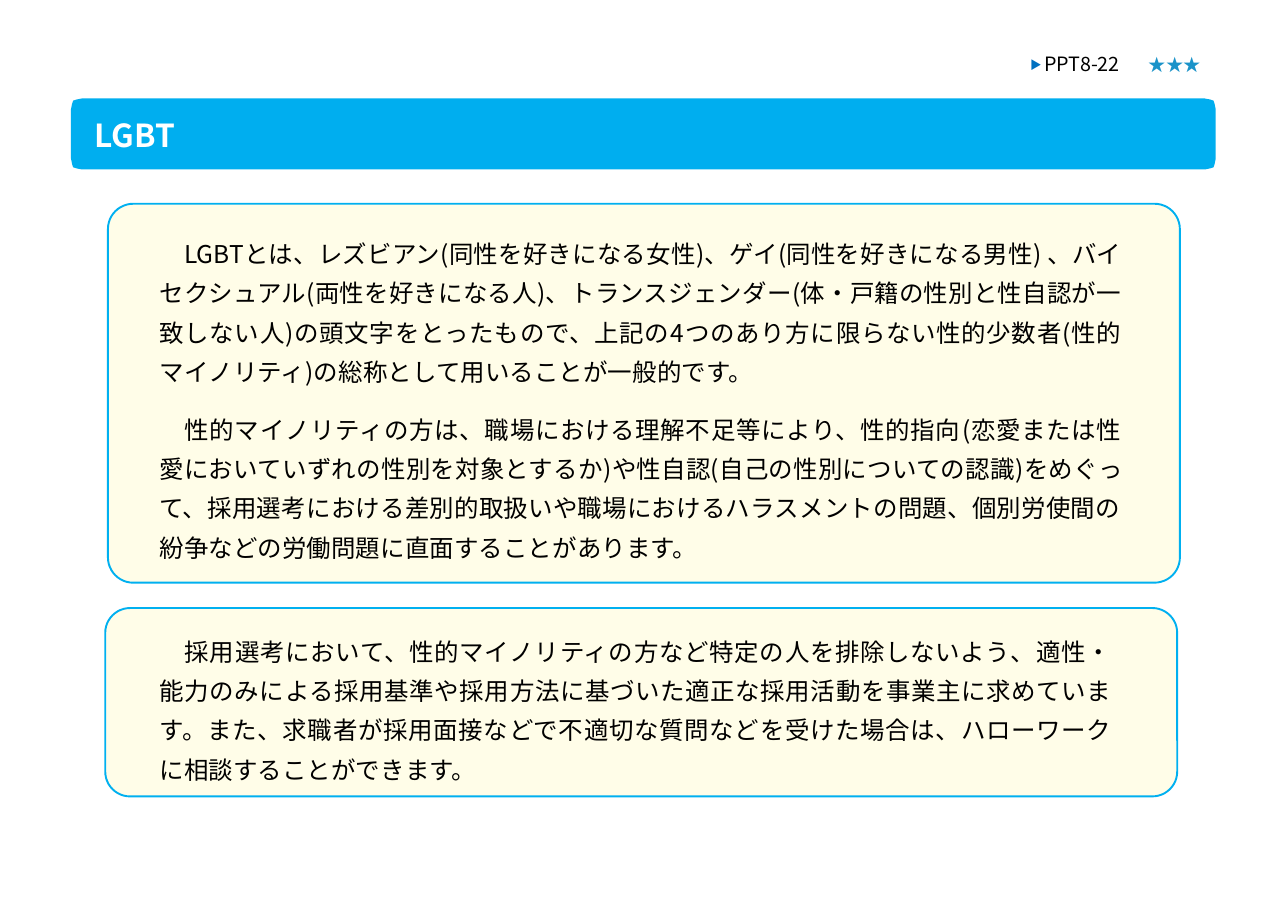
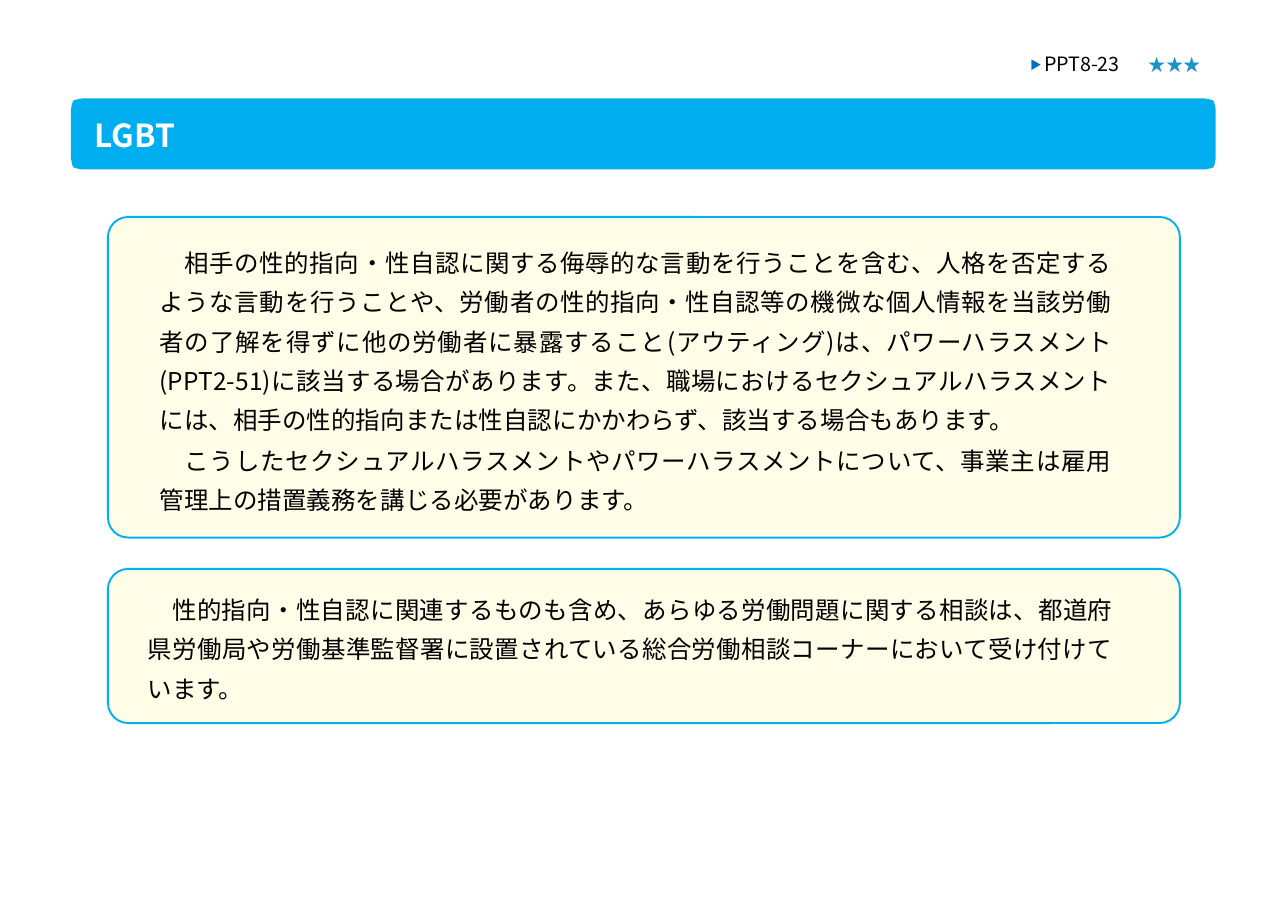
from lxml import etree
from pptx import Presentation, util as u
from pptx.dml.color import RGBColor
from pptx.enum import lang, shapes, text
from pptx.oxml.ns import qn

WIDTH, HEIGHT = u.Inches(11.69), u.Inches(8.27)
FONT = "Noto Sans CJK JP"

BAND_BLUE = RGBColor(0x00, 0xAE, 0xEF)
BORDER_BLUE = RGBColor(0x00, 0xB0, 0xF0)
MARK_BLUE = RGBColor(0x00, 0x70, 0xC0)
STAR_BLUE = RGBColor(0x1B, 0x93, 0xC9)
CREAM = RGBColor(0xFF, 0xFD, 0xE8)
WHITE = RGBColor(0xFF, 0xFF, 0xFF)
BLACK = RGBColor(0x00, 0x00, 0x00)

# Areas are (left, top, width, height) in percent of the slide.
BAND = (5.51, 10.81, 88.88, 7.8)
TITLE = (7.27, 12.5, 79.9, 4.47)
CODE = (79.9, 5.44, 9.32, 2.78)
STARS = (88.37, 5.32, 5.82, 3.51)

# Steps along one band corner, in inches from that corner.
CORNER = [(0.1, 0), (0.05, 0.01), (0.02, 0.02), (0.01, 0.05), (0, 0.1)]

# Each panel: frame area, corner rounding, text area, paragraphs, gap between them.
PAGES = [
    ("PPT8-22", [
        ((8.38, 22.37, 83.23, 41.6), 0.067, (12.3, 25.03, 74.78, 36.52), [
            "　LGBTとは、レズビアン(同性を好きになる女性)、ゲイ(同性を好きになる男性) 、"
            "バイセクシュアル(両性を好きになる人)、トランスジェンダー(体・戸籍の性別と性自認が"
            "一致しない人)の頭文字をとったもので、上記の4つのあり方に限らない性的少数者"
            "(性的マイノリティ)の総称として用いることが一般的です。",
            "　性的マイノリティの方は、職場における理解不足等により、性的指向(恋愛または性愛に"
            "おいていずれの性別を対象とするか)や性自認(自己の性別についての認識)をめぐって、"
            "採用選考における差別的取扱いや職場におけるハラスメントの問題、個別労使間の紛争などの"
            "労働問題に直面することがあります。",
        ], 12),
        ((8.17, 66.75, 83.23, 20.68), 0.132, (12.3, 68.68, 74.1, 17.05), [
            "　採用選考において、性的マイノリティの方など特定の人を排除しないよう、適性・能力のみ"
            "による採用基準や採用方法に基づいた適正な採用活動を事業主に求めています。また、"
            "求職者が採用面接などで不適切な質問などを受けた場合は、ハローワークに相談することが"
            "できます。",
        ], 0.8),
    ]),
    ("PPT8-23", [
        ((8.38, 23.82, 83.23, 35.19), 0.063, (12.3, 26, 74.1, 30.47), [
            "　相手の性的指向・性自認に関する侮辱的な言動を行うことを含む、人格を否定するような"
            "言動を行うことや、労働者の性的指向・性自認等の機微な個人情報を当該労働者の了解を"
            "得ずに他の労働者に暴露すること(アウティング)は、パワーハラスメント(PPT2-51)に"
            "該当する場合があります。また、職場におけるセクシュアルハラスメントには、相手の"
            "性的指向または性自認にかかわらず、該当する場合もあります。",
            "　こうしたセクシュアルハラスメントやパワーハラスメントについて、事業主は雇用管理上の"
            "措置義務を講じる必要があります。",
        ], 0.8),
        ((8.38, 62.45, 83.23, 16.93), 0.132, (11.38, 64.09, 75.11, 12.58), [
            "　性的指向・性自認に関連するものも含め、あらゆる労働問題に関する相談は、都道府県"
            "労働局や労働基準監督署に設置されている総合労働相談コーナーにおいて受け付けています。",
        ], 0.8),
    ]),
]


def place(area):
    """Turn percentages of the slide into lengths."""
    return [round(share * side / 100)
            for share, side in zip(area, (WIDTH, HEIGHT) * 2)]


def add_span(para, words, size, color, bold=False, baseline=0, tracking=0):
    """Add a run; baseline is in percent and tracking in points."""
    span = para.add_run()
    span.text = words
    font = span.font
    font.name, font.size, font.bold = FONT, u.Pt(size), bold
    font.color.rgb = color
    font.language_id = lang.MSO_LANGUAGE_ID.JAPANESE
    props = span._r.get_or_add_rPr()
    etree.SubElement(props, qn("a:ea")).set("typeface", FONT)
    if baseline:
        props.set("baseline", str(baseline * 1000))
    if tracking:
        props.set("spc", str(round(tracking * 100)))


def add_text(page, area, paragraphs, wrap=True, insets=(0.01, 0.02, 0, 0),
             before=0, gap=0, spacing=None, align=None, **style):
    """Write paragraphs, each a string or a list of (words, own style)."""
    frame = page.shapes.add_textbox(*place(area)).text_frame
    frame.word_wrap = wrap
    frame.auto_size = text.MSO_AUTO_SIZE.SHAPE_TO_FIT_TEXT
    (frame.margin_left, frame.margin_top,
     frame.margin_right, frame.margin_bottom) = map(u.Inches, insets)
    for index, content in enumerate(paragraphs):
        para = frame.add_paragraph() if index else frame.paragraphs[0]
        para.space_before = u.Pt(gap if index else before)
        para.line_spacing, para.alignment = spacing, align
        spans = [(content, {})] if isinstance(content, str) else content
        for words, own in spans:
            add_span(para, words, **{**style, **own})


def add_band(page):
    left, top, width, height = place(BAND)
    right, bottom = left + width, top + height
    corners = [(left, 1, top, 1), (left, 1, bottom, -1),
               (right, -1, bottom, -1), (right, -1, top, 1)]
    points = []
    for index, (x, x_way, y, y_way) in enumerate(corners):
        steps = CORNER[::-1] if index % 2 else CORNER
        points += [(x + x_way * u.Inches(dx), y + y_way * u.Inches(dy))
                   for dx, dy in steps]
    outline = page.shapes.build_freeform(*points[0])
    outline.add_line_segments(points[1:], close=True)
    band = outline.convert_to_shape()
    band.shadow.inherit = False
    band.fill.solid()
    band.fill.fore_color.rgb = BAND_BLUE
    band.line.fill.background()


def add_header(page, code):
    add_band(page)
    add_text(page, TITLE, ["LGBT"], before=1.2, size=20.7, color=WHITE,
             bold=True, tracking=0.1)
    mark = ("▶ ", {"color": MARK_BLUE, "baseline": 9})
    add_text(page, CODE, [[mark, (code, {})]], before=1.1, size=12.9, color=BLACK)
    add_text(page, STARS, ["★★★"], wrap=False, insets=(0.1, 0.05, 0.1, 0.05),
             size=11.3, color=STAR_BLUE)


def add_panel(page, frame_area, rounding, text_area, paragraphs, gap):
    panel = page.shapes.add_shape(shapes.MSO_SHAPE.ROUNDED_RECTANGLE,
                                  *place(frame_area))
    panel.adjustments[0] = rounding
    panel.shadow.inherit = False
    panel.fill.solid()
    panel.fill.fore_color.rgb = CREAM
    panel.line.color.rgb = BORDER_BLUE
    panel.line.width = u.Pt(1.25)
    add_text(page, text_area, paragraphs, insets=(0.01, 0.01, 0, 0),
             before=0.8, gap=gap, spacing=1.34, align=text.PP_ALIGN.JUSTIFY,
             size=16, color=BLACK, tracking=0.1)


def main():
    deck = Presentation()
    deck.slide_width, deck.slide_height = WIDTH, HEIGHT
    blank = deck.slide_layouts[6]
    for code, panels in PAGES:
        page = deck.slides.add_slide(blank)
        add_header(page, code)
        for panel in panels:
            add_panel(page, *panel)
    deck.save("out.pptx")


if __name__ == "__main__":
    main()
